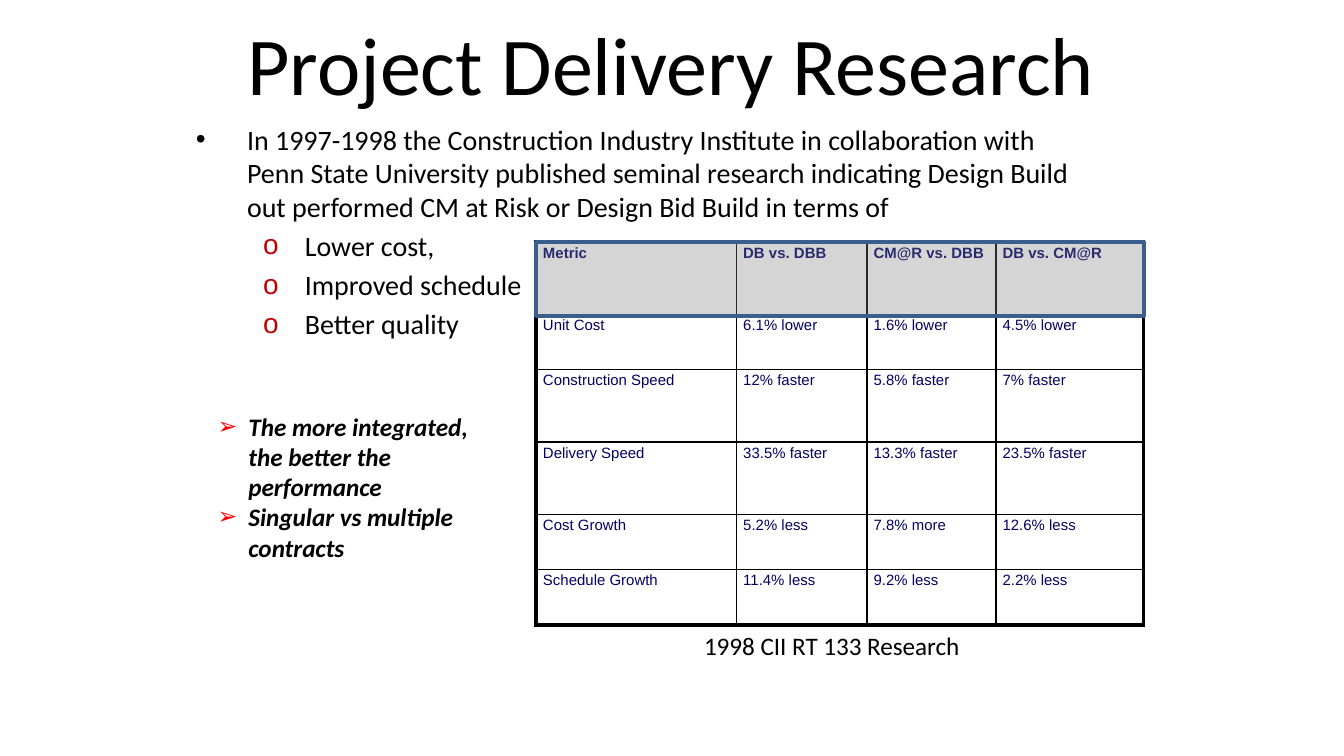
from lxml.etree import SubElement
from pptx import Presentation
from pptx.dml.color import RGBColor
from pptx.enum.shapes import MSO_SHAPE as Shape
from pptx.enum.text import MSO_ANCHOR as Anchor, MSO_AUTO_SIZE as AutoSize, PP_ALIGN as Align
from pptx.oxml import parse_xml
from pptx.oxml.ns import nsdecls, qn
from pptx.util import Inches, Pt

TITLE = "Project Delivery Research"
INTRO = (
    "In 1997-1998 the Construction Industry Institute in collaboration with "
    "Penn State University published seminal research indicating Design Build "
    "out performed CM at Risk or Design Bid Build in terms of"
)
BENEFITS = ["Lower cost,", "Improved schedule", "Better quality"]
TAKEAWAYS = [
    "The more integrated, the better the performance",
    "Singular vs multiple contracts",
]
CAPTION = "1998 CII RT 133 Research"
METRICS = [
    ("Metric", "DB vs. DBB", "CM@R vs. DBB", "DB vs. CM@R"),
    ("Unit Cost", "6.1% lower", "1.6% lower", "4.5% lower"),
    ("Construction Speed", "12% faster", "5.8% faster", "7% faster"),
    ("Delivery Speed", "33.5% faster", "13.3% faster", "23.5% faster"),
    ("Cost Growth", "5.2% less", "7.8% more", "12.6% less"),
    ("Schedule Growth", "11.4% less", "9.2% less", "2.2% less"),
]
COLUMN_WIDTHS = [1.49, 0.97, 0.96, 1.1]
ROW_HEIGHTS = [0.54, 0.41, 0.54, 0.54, 0.41, 0.41]
TABLE_LEFT, TABLE_TOP = 3.99, 1.8
INTRO_BULLET = dict(bullet="•", bullet_color="000000", margin=0.38, hang=0.38)
BENEFIT_BULLET = dict(bullet="o", bullet_color="C00000", margin=0.81, hang=0.31, level=1, before=3)
TAKEAWAY_BULLET = dict(bullet="➢", bullet_color="FF0000", bullet_size=93, margin=0.23, hang=0.23)


def color(value):
    return RGBColor.from_string(value)


def write(frame, text, size=15, font="Calibri", ink="000000", bold=False, italic=False,
          align=Align.LEFT, level=0, before=0, bullet=None, bullet_color=None,
          bullet_size=100, margin=0, hang=0):
    para = frame.paragraphs[0]
    if para.runs:
        para = frame.add_paragraph()
    para.alignment, para.level, para.space_before = align, level, Pt(before)
    if bullet:
        props = para._p.get_or_add_pPr()
        props.set("marL", str(Inches(margin)))
        props.set("indent", str(-Inches(hang)))
        SubElement(SubElement(props, qn("a:buClr")), qn("a:srgbClr")).set("val", bullet_color)
        SubElement(props, qn("a:buSzPct")).set("val", str(bullet_size * 1000))
        SubElement(props, qn("a:buFont")).set("typeface", "Arial")
        SubElement(props, qn("a:buChar")).set("char", bullet)
    span = para.add_run()
    span.text = text
    span.font.size, span.font.name = Pt(size), font
    span.font.bold, span.font.italic = bold, italic
    span.font.color.rgb = color(ink)


def add_box(page, left, top, width, height, wrap=True, anchor=Anchor.TOP, fit=AutoSize.NONE):
    frame = page.shapes.add_textbox(*map(Inches, (left, top, width, height))).text_frame
    frame.word_wrap, frame.vertical_anchor, frame.auto_size = wrap, anchor, fit
    return frame


def set_borders(cell, widths):
    props = cell._tc.get_or_add_tcPr()
    for index, (side, width) in enumerate(zip("LRTB", widths)):
        props.insert(index, parse_xml(
            f'<a:ln{side} {nsdecls("a")} w="{Pt(width)}"><a:solidFill>'
            f'<a:srgbClr val="000000"/></a:solidFill></a:ln{side}>'))


def add_metrics(page):
    rows, columns = len(METRICS), len(COLUMN_WIDTHS)
    table = page.shapes.add_table(
        rows, columns, Inches(TABLE_LEFT), Inches(TABLE_TOP),
        Inches(sum(COLUMN_WIDTHS)), Inches(sum(ROW_HEIGHTS))).table
    for column, width in zip(table.columns, COLUMN_WIDTHS):
        column.width = Inches(width)
    for r, (row, height) in enumerate(zip(table.rows, ROW_HEIGHTS)):
        row.height = Inches(height)
        for c, cell in enumerate(row.cells):
            cell.fill.background()
            cell.margin_left = cell.margin_right = Inches(0.05)
            cell.margin_top = cell.margin_bottom = Inches(0.02)
            write(cell.text_frame, METRICS[r][c], size=8, font="Arial", ink="000066", bold=r == 0)
            outer = (c == 0, c == columns - 1, r == 0, r == rows - 1)
            set_borders(cell, [2.25 if edge else 1 for edge in outer])


def add_header_tint(page):
    tint = page.shapes.add_shape(
        Shape.RECTANGLE, Inches(TABLE_LEFT), Inches(TABLE_TOP),
        Inches(sum(COLUMN_WIDTHS)), Inches(0.55))
    tint.shadow.inherit = False
    tint.fill.solid()
    tint.fill.fore_color.rgb = color("808080")
    shade = tint._element.spPr.find(qn("a:solidFill")).find(qn("a:srgbClr"))
    SubElement(shade, qn("a:alpha")).set("val", "33000")
    tint.line.color.rgb = color("3A5F8C")
    tint.line.width = Pt(2)


def main():
    deck = Presentation()
    deck.slide_width = Inches(10)
    deck.slide_height = deck.slide_width * 9 // 16
    page = deck.slides.add_slide(deck.slide_layouts[6])

    title = add_box(page, 1.62, 0, 6.75, 0.94, anchor=Anchor.MIDDLE)
    write(title, TITLE, size=44, align=Align.CENTER)

    body = add_box(page, 1.36, 0.86, 6.75, 3.5)
    write(body, INTRO, **INTRO_BULLET)
    for benefit in BENEFITS:
        write(body, benefit, **BENEFIT_BULLET)

    add_metrics(page)

    caption = add_box(page, 5.14, 4.64, 2.13, 0.33, wrap=False, fit=AutoSize.SHAPE_TO_FIT_TEXT)
    write(caption, CAPTION, size=13.5)

    takeaways = add_box(page, 1.52, 3.01, 2.32, 1.24, fit=AutoSize.SHAPE_TO_FIT_TEXT)
    for takeaway in TAKEAWAYS:
        write(takeaways, takeaway, size=13.5, bold=True, italic=True, **TAKEAWAY_BULLET)

    add_header_tint(page)
    deck.save("out.pptx")


if __name__ == "__main__":
    main()
